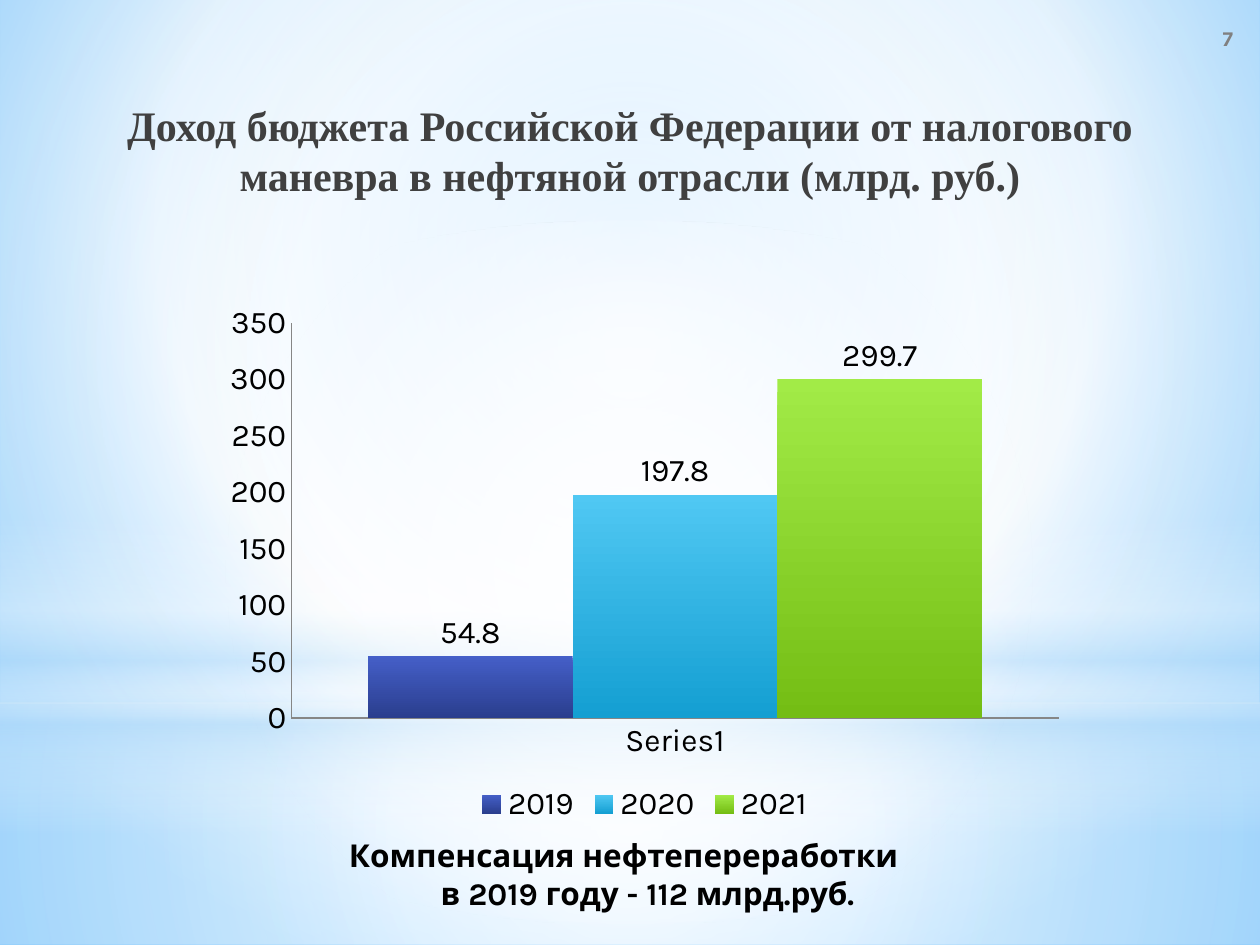
"""Build a slide with a column chart of budget income from the oil tax manoeuvre."""
from lxml import etree
from pptx import Presentation
from pptx.chart.data import CategoryChartData
from pptx.dml.color import RGBColor
from pptx.enum.chart import XL_CHART_TYPE, XL_LABEL_POSITION, XL_LEGEND_POSITION, XL_TICK_MARK
from pptx.enum.shapes import MSO_SHAPE
from pptx.enum.text import MSO_ANCHOR, PP_ALIGN
from pptx.oxml.ns import qn
from pptx.util import Inches, Pt

RECT, OVAL = MSO_SHAPE.RECTANGLE, MSO_SHAPE.OVAL
CENTER, MIDDLE, BOTTOM = PP_ALIGN.CENTER, MSO_ANCHOR.MIDDLE, MSO_ANCHOR.BOTTOM
COLUMN, NO_TICK = XL_CHART_TYPE.COLUMN_CLUSTERED, XL_TICK_MARK.NONE
ABOVE, BELOW = XL_LABEL_POSITION.OUTSIDE_END, XL_LEGEND_POSITION.BOTTOM
MID = (50, 50, 50, 50)


def style(font, size, color, name="Karla", bold=True):
    font.size, font.name, font.bold = Pt(size), name, bold
    font.color.rgb = RGBColor.from_string(color)


def blend(fill, root, stops, focus=None):
    fill.solid()
    fill.fore_color.rgb = RGBColor.from_string(stops[0][1])
    old = next(root.iter(qn("a:solidFill")))
    grad = etree.Element(qn("a:gradFill"), rotWithShape="1")
    items = etree.SubElement(grad, qn("a:gsLst"))
    for pos, color, alpha in stops:
        stop = etree.SubElement(items, qn("a:gs"), pos=str(pos * 1000))
        tint = etree.SubElement(stop, qn("a:srgbClr"), val=color)
        if alpha < 100:
            etree.SubElement(tint, qn("a:alpha"), val=str(alpha * 1000))
    if focus:
        way = etree.SubElement(grad, qn("a:path"))
        way.set("path", "circle")
        rect = etree.SubElement(way, qn("a:fillToRect"))
        for side, part in zip("ltrb", focus):
            rect.set(side, str(part * 1000))
    else:
        etree.SubElement(grad, qn("a:lin"), ang="5400000", scaled="0")
    old.getparent().replace(old, grad)


prs = Presentation()
prs.slide_width, prs.slide_height = Inches(10), Inches(7.5)
slide = prs.slides.add_slide(prs.slide_layouts[5])
shapes = slide.shapes
blend(slide.background.fill, slide._element,
      [(0, "9ED5FF", 100), (60, "FFFFFF", 100), (100, "5BB9FF", 100)], (20, 10, 20, 60))

layers = [
    (RECT, 5.58, 1.92, [(0, "FFFFFF", 91), (37, "FFFFFF", 76), (100, "B4DCFA", 79)], MID),
    (RECT, 0, 5.58, [(0, "FFFFFF", 89), (48, "FFFFFF", 62), (100, "B4DCFA", 79)], MID),
    (RECT, 4.12, 2.5, [(0, "FFFFFF", 0), (29, "FFFFFF", 30), (45, "B4DCFA", 40),
                       (55, "FFFFFF", 26), (65, "B4DCFA", 60), (100, "FFFFFF", 0)], None),
    (OVAL, 1.75, 5.58, [(0, "FFFFFF", 100), (56, "FFFFFF", 0)], MID),
]
for kind, top, height, stops, focus in layers:
    layer = shapes.add_shape(kind, 0, Inches(top), Inches(10), Inches(height))
    layer.shadow.inherit = False
    layer.line.fill.background()
    blend(layer.fill, layer._element, stops, focus)

title = shapes.title
title.left, title.top, title.width, title.height = map(Inches, (0.5, 0.39, 9, 1.25))
title.text_frame.text = ("Доход бюджета Российской Федерации от налогового "
                         "маневра в нефтяной отрасли (млрд. руб.)")
title.text_frame.vertical_anchor = BOTTOM
head = title.text_frame.paragraphs[0]
head.alignment = CENTER
style(head.font, 24, "404040", "Times New Roman")
shapes._spTree.append(title._element)

data = CategoryChartData()
data.categories = ["Series1"]
for year, value in (("2019", 54.8), ("2020", 197.8), ("2021", 299.7)):
    data.add_series(year, [value])
chart = shapes.add_chart(COLUMN, Inches(1.69), Inches(2.33), Inches(6.85), Inches(4.25), data).chart
style(chart.font, 18, "000000", bold=False)
chart.has_title = False
chart.has_legend = True
chart.legend.position = BELOW
chart.legend.include_in_layout = False
for axis in (chart.category_axis, chart.value_axis):
    axis.major_tick_mark = axis.minor_tick_mark = NO_TICK
    axis.has_major_gridlines = False
    axis.format.line.color.rgb = RGBColor.from_string("868686")
    axis.format.line.width = Pt(0.75)
chart.value_axis.minimum_scale, chart.value_axis.maximum_scale = 0, 350
chart.value_axis.major_unit = 50

plot = chart.plots[0]
plot.gap_width, plot.overlap, plot.vary_by_categories = 75, 0, False
plot.has_data_labels = True
plot.data_labels.show_value = True
plot.data_labels.position = ABOVE
tones = [("455FC8", "2A3E8E"), ("50C8F3", "149FD2"), ("A2EB47", "74BD14")]
for series, (light, dark) in zip(plot.series, tones):
    blend(series.format.fill, series._element, [(0, light, 100), (100, dark, 100)])

notes = [
    ((9.49, 0.05, 0.51, 0.51), 12, "808080", [("7", None)]),
    ((2.64, 6.58, 5, 0.71), 18, "000000",
     [("Компенсация нефтепереработки", "marR"), ("в 2019 году - 112 млрд.руб.", "marL")]),
]
for place, size, color, lines in notes:
    frame = shapes.add_textbox(*map(Inches, place)).text_frame
    frame.word_wrap = True
    frame.vertical_anchor = MIDDLE
    frame.text = "\n".join(text for text, side in lines)
    for para, (text, side) in zip(frame.paragraphs, lines):
        para.alignment = CENTER
        style(para.font, size, color)
        if side:
            para._p.get_or_add_pPr().set(side, str(Inches(0.38)))

prs.save("out.pptx")
